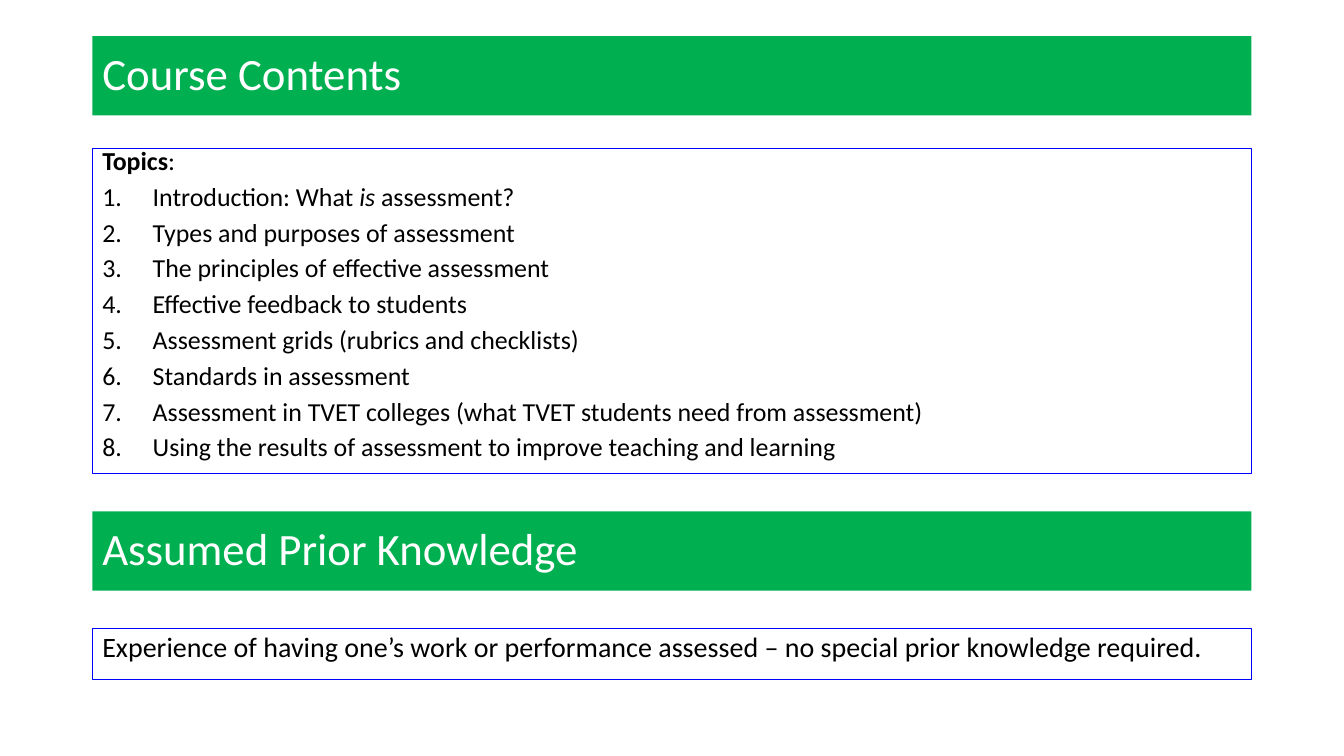
from lxml.etree import SubElement
from pptx import Presentation
from pptx.dml.color import RGBColor
from pptx.enum.shapes import MSO_SHAPE
from pptx.enum.text import MSO_ANCHOR, PP_ALIGN
from pptx.oxml.ns import qn
from pptx.util import Pt

LEFT, WIDTH = 66, 828
HEADING_HEIGHT = 56.7
GREEN, BLUE, WHITE, BLACK = "00B050", "0000FF", "FFFFFF", "000000"
TOPICS = [
    [("Introduction: What ", {}), ("is", {"italic": True}), (" assessment?", {})],
    [("Types and purposes of assessment", {})],
    [("The principles of effective assessment", {})],
    [("Effective feedback to students", {})],
    [("Assessment grids (rubrics and checklists)", {})],
    [("Standards in assessment", {})],
    [("Assessment in TVET colleges (what TVET students need from assessment)", {})],
    [("Using the results of assessment to improve teaching and learning", {})],
]


def color(value):
    return RGBColor.from_string(value)


def add_box(slide, top, height, anchor, fill=None, line=None):
    shape = slide.shapes.add_shape(
        MSO_SHAPE.RECTANGLE, Pt(LEFT), Pt(top), Pt(WIDTH), Pt(height))
    shape.shadow.inherit = False
    if fill:
        shape.fill.solid()
        shape.fill.fore_color.rgb = color(fill)
    else:
        shape.fill.background()
    if line:
        shape.line.color.rgb = color(line)
        shape.line.width = Pt(0.75)
    else:
        shape.line.fill.background()
    shape.text_frame.word_wrap = True
    shape.text_frame.vertical_anchor = anchor
    return shape.text_frame


def write(paragraph, runs, size, font_color, spacing):
    paragraph.alignment = PP_ALIGN.LEFT
    paragraph.line_spacing = spacing
    paragraph.font.name = "Calibri"
    paragraph.font.size = Pt(size)
    paragraph.font.color.rgb = color(font_color)
    for text, style in runs:
        run = paragraph.add_run()
        run.text = text
        for name, value in style.items():
            setattr(run.font, name, value)


def set_indent(paragraph, indent, numbered=False):
    paragraph.space_before = Pt(10)
    properties = paragraph._p.get_or_add_pPr()
    properties.set("marL", str(Pt(indent)))
    properties.set("indent", str(-Pt(indent)))
    if numbered:
        bullet = SubElement(properties, qn("a:buAutoNum"), type="arabicPeriod")
        default_font = properties.find(qn("a:defRPr"))
        if default_font is not None:
            default_font.addprevious(bullet)


def add_heading(slide, top, text):
    frame = add_box(slide, top, HEADING_HEIGHT, MSO_ANCHOR.MIDDLE, fill=GREEN)
    write(frame.paragraphs[0], [(text, {})], 32, WHITE, 0.9)


def add_topics(slide, top, height):
    frame = add_box(slide, top, height, MSO_ANCHOR.TOP, line=BLUE)
    label = frame.paragraphs[0]
    write(label, [("Topics", {"bold": True}), (":", {})], 18.5, BLACK, 0.7)
    set_indent(label, 18)
    for runs in TOPICS:
        paragraph = frame.add_paragraph()
        write(paragraph, runs, 18.5, BLACK, 0.7)
        set_indent(paragraph, 36, numbered=True)


def add_statement(slide, top, height, text):
    frame = add_box(slide, top, height, MSO_ANCHOR.TOP, line=BLUE)
    paragraph = frame.paragraphs[0]
    write(paragraph, [(text, {})], 20, BLACK, 0.9)
    set_indent(paragraph, 18)


def main():
    presentation = Presentation()
    presentation.slide_width, presentation.slide_height = Pt(960), Pt(540)
    slide = presentation.slides.add_slide(presentation.slide_layouts[6])
    add_heading(slide, 25.8, "Course Contents")
    add_topics(slide, 105.8, 232.4)
    add_heading(slide, 365.3, "Assumed Prior Knowledge")
    add_statement(
        slide, 448.7, 36.7,
        "Experience of having one’s work or performance assessed – "
        "no special prior knowledge required.")
    presentation.save("out.pptx")


if __name__ == "__main__":
    main()
